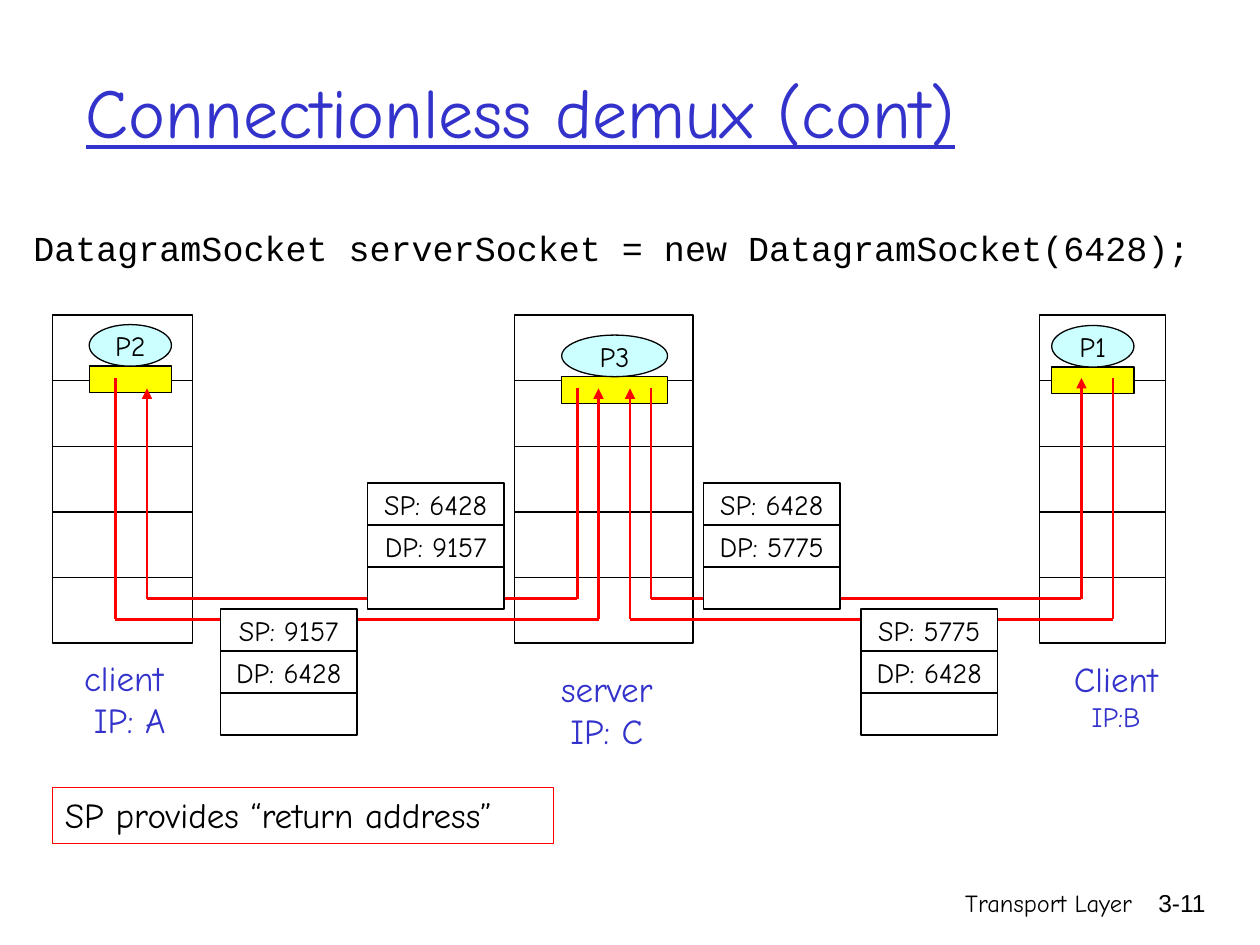
import pptx
import pptx.util
import pptx.dml.color
import pptx.enum.shapes
import pptx.enum.text
import pptx.oxml
import pptx.oxml.ns

Pt = pptx.util.Pt
SHAPES = pptx.enum.shapes.MSO_SHAPE
ALIGN = pptx.enum.text.PP_ALIGN
ANCHOR = pptx.enum.text.MSO_ANCHOR

COLORS = {"ink": "000000", "blue": "3333CC", "wire": "FF0000",
          "paper": "FFFFFF", "socket": "FFFF00", "process": "CCFFFF"}


def rgb(name):
    return pptx.dml.color.RGBColor.from_string(COLORS[name])


class DemuxSlide:
    """Holds the text style and the slide being drawn."""
    font = "Comic Neue"
    layers, layer_height = 5, 37.5
    field_width, field_height = 78, 24

    def __init__(self, slide):
        self.slide = slide

    def label(self, target, lines, align=ALIGN.CENTER, anchor=ANCHOR.TOP,
              wrap=True, color="ink", **font_values):
        """Each line is a (text, size) pair."""
        frame = target.text_frame
        frame.word_wrap = wrap
        frame.vertical_anchor = anchor
        for index, (text, size) in enumerate(lines):
            paragraph = frame.paragraphs[0] if index == 0 else frame.add_paragraph()
            paragraph.alignment = align
            run = paragraph.add_run()
            run.text = text
            values = {"name": self.font, "size": Pt(size), **font_values}
            for key, value in values.items():
                setattr(run.font, key, value)
            run.font.color.rgb = rgb(color)

    def text(self, left, top, width, height, lines, **style):
        box = self.slide.shapes.add_textbox(Pt(left), Pt(top), Pt(width), Pt(height))
        self.label(box, lines, **style)
        return box

    def shape(self, left, top, width, height, fill="paper", line="ink", kind=SHAPES.RECTANGLE):
        shape = self.slide.shapes.add_shape(kind, Pt(left), Pt(top), Pt(width), Pt(height))
        shape.shadow.inherit = False
        if fill:
            shape.fill.solid()
            shape.fill.fore_color.rgb = rgb(fill)
        else:
            shape.fill.background()
        shape.line.color.rgb = rgb(line)
        shape.line.width = Pt(0.75)
        return shape

    def host(self, left, width):
        for layer in range(self.layers):
            self.shape(left, 180 + layer * self.layer_height, width, self.layer_height)

    def process(self, name, left, top, width):
        """A process oval standing on its socket."""
        self.shape(left, top + 23.75, width, 15.25, "socket")
        oval = self.shape(left, top, width, 23.75, "process", kind=SHAPES.OVAL)
        self.label(oval, [(name, 16)], anchor=ANCHOR.MIDDLE, wrap=False)

    def wire(self, start, end, arrow=False):
        line = self.slide.shapes.add_connector(
            pptx.enum.shapes.MSO_CONNECTOR.STRAIGHT, *map(Pt, start + end))
        line.line.color.rgb = rgb("wire")
        line.line.width = Pt(1.5)
        properties = line._element.spPr
        namespace = pptx.oxml.ns.nsdecls("a")
        if arrow:
            properties.find(pptx.oxml.ns.qn("a:ln")).append(
                pptx.oxml.parse_xml(f'<a:tailEnd {namespace} type="triangle"/>'))
        properties.append(pptx.oxml.parse_xml(f'<a:effectLst {namespace}/>'))

    def flow(self, sender, receiver, depth):
        """Down from the sending socket, across, and up to the receiving one."""
        corners = [sender, (sender[0], depth), (receiver[0], depth), receiver]
        for index, (start, end) in enumerate(zip(corners, corners[1:])):
            self.wire(start, end, arrow=index == 2)

    def datagram(self, left, top, source, destination):
        for row, field in enumerate((f"SP: {source}", f"DP: {destination}", None)):
            cell = self.shape(left, top + row * self.field_height,
                              self.field_width, self.field_height)
            if field:
                self.label(cell, [(field, 16)], anchor=ANCHOR.MIDDLE, wrap=False)


def main():
    deck = pptx.Presentation()
    deck.slide_width, deck.slide_height = Pt(720), Pt(540)
    page = DemuxSlide(deck.slides.add_slide(deck.slide_layouts[6]))

    # Footer, title and code
    page.text(426, 504, 228, 36, [("Transport Layer", 14)], align=ALIGN.RIGHT)
    page.text(643, 504, 53, 36, [("3-11", 14)], align=ALIGN.RIGHT, name="Arial")
    page.text(42, 18, 612, 90, [("Connectionless demux (cont)", 40)], align=ALIGN.LEFT,
              anchor=ANCHOR.MIDDLE, color="blue", underline=True)
    code = page.text(12, 126, 684, 48,
                     [("DatagramSocket serverSocket = new DatagramSocket(6428);", 20)],
                     align=ALIGN.LEFT, name="Courier New")
    code.text_frame.paragraphs[0].space_before = Pt(4)

    # Hosts with their processes
    for left, width in ((30, 80), (294, 102), (594, 72)):
        page.host(left, width)
    for name, left, top, width in (("P2", 51, 185.5, 47), ("P3", 321, 191.5, 60.5),
                                   ("P1", 601, 186, 47)):
        page.process(name, left, top, width)

    # Host names
    for left, top, width, lines in (
            (36.5, 371.5, 68.5, [("client", 20), (" IP: A", 20)]),
            (309, 378, 75.5, [("server", 20), ("IP: C", 20)]),
            (603.5, 372, 68.5, [("Client", 20), ("IP:B", 16)])):
        page.text(left, top, width, 55, lines, wrap=False, color="blue")

    # Flows between the sockets
    for sender, receiver, depth in (((66, 216), (342, 222), 354),
                                    ((330, 222), (84, 222), 342),
                                    ((636, 216), (360, 222), 354),
                                    ((372, 222), (618, 216), 342)):
        page.flow(sender, receiver, depth)

    # Datagrams: replies above, requests below
    for left, top, source, destination in ((210, 276, 6428, 9157), (126, 348, 9157, 6428),
                                           (402, 276, 6428, 5775), (492, 348, 5775, 6428)):
        page.datagram(left, top, source, destination)

    # Remark
    remark = page.shape(30, 450, 286.5, 32, fill=None, line="wire")
    page.label(remark, [("SP provides “return address”", 20)], align=ALIGN.LEFT)

    deck.save("out.pptx")


if __name__ == "__main__":
    main()
